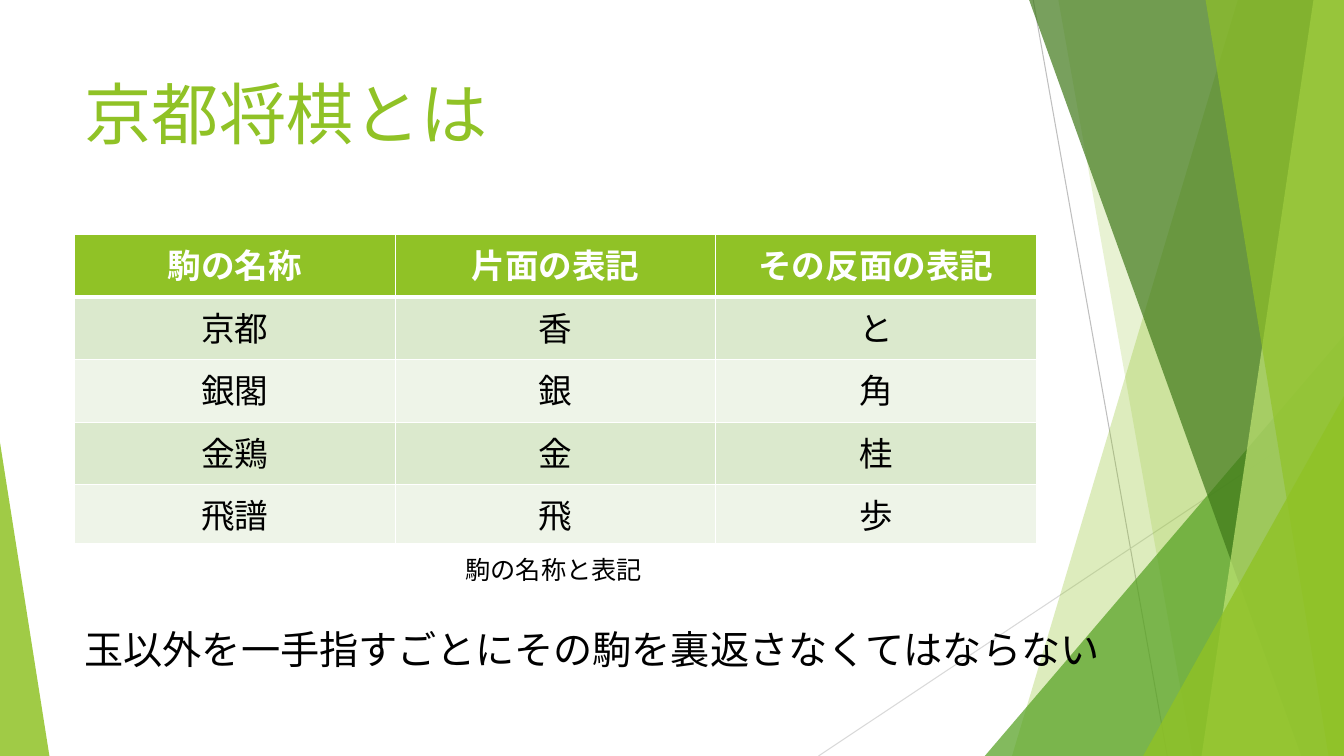
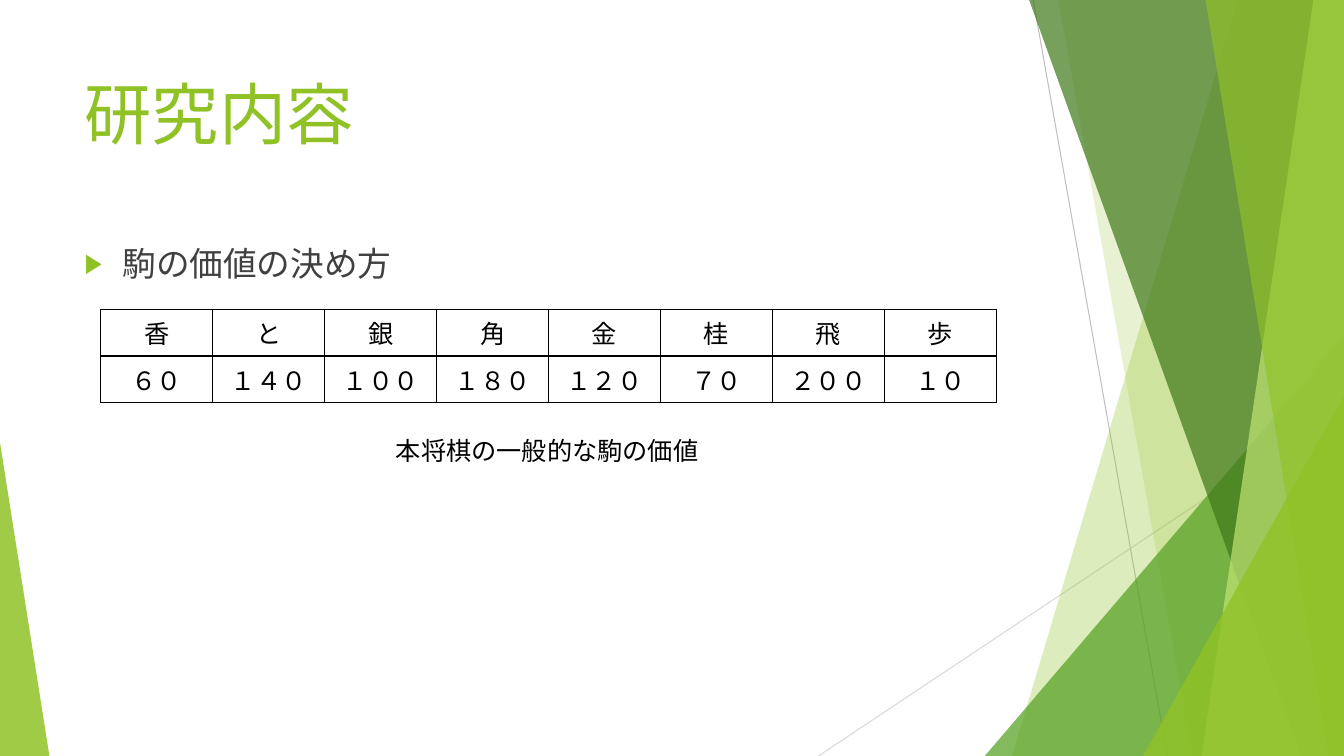
from lxml.etree import SubElement
from pptx import Presentation
from pptx.dml.color import RGBColor
from pptx.enum.lang import MSO_LANGUAGE_ID as Language
from pptx.enum.shapes import MSO_CONNECTOR as Connector, MSO_SHAPE as Preset
from pptx.enum.text import MSO_ANCHOR as Anchor, MSO_AUTO_SIZE as AutoSize, PP_ALIGN as Align
from pptx.oxml.ns import qn
from pptx.oxml.xmlchemy import OxmlElement
from pptx.util import Inches, Pt

LIME = RGBColor(0x90, 0xC2, 0x26)
LEAF = RGBColor(0x54, 0xA0, 0x21)
FOREST = RGBColor(0x3F, 0x78, 0x19)
PALE_LIME = RGBColor(0xC0, 0xE4, 0x74)
MIST = RGBColor(0xDB, 0xE9, 0xCD)
LIGHT_MIST = RGBColor(0xEE, 0xF4, 0xE8)
CHARCOAL = RGBColor(0x40, 0x40, 0x40)
SILVER = RGBColor(0xBF, 0xBF, 0xBF)
LIGHT_SILVER = RGBColor(0xD9, 0xD9, 0xD9)
BLACK = RGBColor(0x00, 0x00, 0x00)
WHITE = RGBColor(0xFF, 0xFF, 0xFF)

FONT = "Cabin"
COLUMNS, ROWS = 133.33, 75
MARGIN, TEXT_WIDTH = 7.4, 94
TITLE_AND_BODY, TITLE_ONLY = 1, 5


def grid(cells):
    return Inches(cells / 10)


class ShogiDeck:
    def __init__(self):
        self.deck = Presentation()
        self.deck.slide_width = grid(COLUMNS)
        self.deck.slide_height = grid(ROWS)
        self.page = None

    def add_page(self, title, layout):
        self.page = self.deck.slides.add_slide(self.deck.slide_layouts[layout])
        self.backdrop()
        box = self.page.shapes.title
        self.place(box, MARGIN, 6.7, TEXT_WIDTH, 14.4)
        self.fill_frame(box.text_frame, title, 48, LIME)

    def backdrop(self):
        self.line((102.5, 0), (115.8, ROWS), SILVER)
        self.line((COLUMNS, 40.3), (81.2, ROWS), LIGHT_SILVER)
        self.band(122.8, 100.4, LIME, 30)
        self.band(105, 118.3, LIME, 20)
        self.corner(97.7, 33.3, COLUMNS, LEAF, 72)
        self.band(102.1, 129.1, FOREST, 70)
        self.band(130.3, 119.2, PALE_LIME, 70)
        self.band(119.6, 131.8, LIME, 65)
        self.corner(113.4, 39.3, COLUMNS, LIME, 80)
        self.corner(0, 43.9, 4.9, LIME, 85, peak=0)

    def line(self, start, end, color):
        line = self.page.shapes.add_connector(
            Connector.STRAIGHT, *map(grid, start + end))
        line.line.color.rgb = color
        line.line.width = Pt(0.75)
        SubElement(line.element.spPr, qn("a:effectLst"))

    def band(self, top, bottom, color, opacity):
        builder = self.page.shapes.build_freeform(grid(top), 0)
        corners = [(COLUMNS, 0), (COLUMNS, ROWS), (bottom, ROWS)]
        builder.add_line_segments([(grid(x), grid(y)) for x, y in corners])
        self.tint(builder.convert_to_shape(), color, opacity)

    def corner(self, left, top, right, color, opacity, peak=1):
        shape = self.page.shapes.add_shape(
            Preset.ISOSCELES_TRIANGLE,
            *map(grid, (left, top, right - left, ROWS - top)))
        shape.adjustments[0] = peak
        self.tint(shape, color, opacity)

    def tint(self, shape, color, opacity):
        shape.shadow.inherit = False
        shape.line.fill.background()
        shape.fill.solid()
        shape.fill.fore_color.rgb = color
        tone = shape.element.spPr.find(".//" + qn("a:srgbClr"))
        SubElement(tone, qn("a:alpha"), val=str(opacity * 1000))

    def place(self, box, left, top, width, height):
        box.left, box.top, box.width, box.height = map(
            grid, (left, top, width, height))

    def fill_frame(self, frame, text, size, color):
        frame.auto_size = AutoSize.NONE
        frame.vertical_anchor = Anchor.TOP
        return self.style(frame.paragraphs[0], text, size, color, Align.LEFT)

    def style(self, para, text, size, color, align, bold=False):
        para.text = text
        para.alignment = align
        font = para.font
        font.name, font.size, font.bold = FONT, Pt(size), bold
        font.color.rgb = color
        font.language_id = Language.JAPANESE
        return para

    def bullet(self, text, top, height):
        box = self.page.placeholders[1]
        self.place(box, MARGIN, top, TEXT_WIDTH, height)
        para = self.fill_frame(box.text_frame, text, 24, CHARCOAL)
        para.space_before = Pt(10)
        settings = para._p.get_or_add_pPr()
        settings.set("marL", str(grid(3.75)))
        settings.set("indent", str(-grid(3.75)))
        marks = [OxmlElement(tag) for tag in ("a:buClr", "a:buSzPct", "a:buFont", "a:buChar")]
        SubElement(marks[0], qn("a:srgbClr"), val=str(LIME))
        marks[1].set("val", "80000")
        marks[2].set("typeface", "Arial")
        marks[3].set("char", "▶")
        for mark in marks:
            settings.find(qn("a:defRPr")).addprevious(mark)

    def text(self, text, left, top, width, height, size, wrap=False):
        box = self.page.shapes.add_textbox(*map(grid, (left, top, width, height)))
        self.fill_frame(box.text_frame, text, size, BLACK)
        box.text_frame.word_wrap = wrap
        box.text_frame.auto_size = AutoSize.SHAPE_TO_FIT_TEXT

    def table(self, records, left, top, column, heights, size, edge,
              fills=(), anchor=Anchor.TOP):
        count = len(records[0])
        table = self.page.shapes.add_table(
            len(records), count,
            *map(grid, (left, top, column * count, sum(heights)))).table
        table.first_row = table.horz_banding = False
        for table_column in table.columns:
            table_column.width = grid(column)
        for index, (record, height) in enumerate(zip(records, heights)):
            table.rows[index].height = grid(height)
            header = bool(fills) and index == 0
            for position, value in enumerate(record):
                cell = table.cell(index, position)
                cell.vertical_anchor = anchor
                self.style(cell.text_frame.paragraphs[0], value, size,
                           WHITE if header else BLACK, Align.CENTER, header)
                if fills:
                    cell.fill.solid()
                    cell.fill.fore_color.rgb = fills[index]
                else:
                    cell.fill.background()
                widths = {"lnL": 1, "lnR": 1,
                          "lnT": 3 if fills and index == 1 else 1,
                          "lnB": 3 if header else 1}
                self.border(cell, edge, widths)

    def border(self, cell, color, widths):
        settings = cell._tc.get_or_add_tcPr()
        for order, (side, width) in enumerate(widths.items()):
            line = OxmlElement("a:" + side)
            line.set("w", str(Pt(width)))
            fill = SubElement(line, qn("a:solidFill"))
            SubElement(fill, qn("a:srgbClr"), val=str(color))
            settings.insert(order, line)


def main():
    show = ShogiDeck()

    show.add_page("京都将棋とは", TITLE_ONLY)
    pieces = [
        ("駒の名称", "片面の表記", "その反面の表記"),
        ("京都", "香", "と"),
        ("銀閣", "銀", "角"),
        ("金鶏", "金", "桂"),
        ("飛譜", "飛", "歩"),
    ]
    show.table(pieces, MARGIN, 23.3, 31.8, [6.2] * 4 + [5.3], 24, WHITE,
               fills=[LIME] + [MIST, LIGHT_MIST] * 2)
    show.text("玉以外を一手指すごとにその駒を裏返さなくてはならない",
              MARGIN, 61.5, 104.6, 5.7, 28, wrap=True)
    show.text("駒の名称と表記", 45.2, 54.5, 19.7, 4, 18)

    show.add_page("研究内容", TITLE_AND_BODY)
    show.bullet("駒の価値の決め方", 23.6, 5.6)
    values = [
        ("香", "と", "銀", "角", "金", "桂", "飛", "歩"),
        ("６０", "１４０", "１００", "１８０", "１２０", "７０", "２００", "１０"),
    ]
    show.table(values, 10, 30.7, 11.11, [4.05] * 2, 18, BLACK, anchor=Anchor.MIDDLE)
    show.text("本将棋の一般的な駒の価値", 38.3, 42.7, 32.3, 4, 18)

    show.deck.save("out.pptx")


if __name__ == "__main__":
    main()
